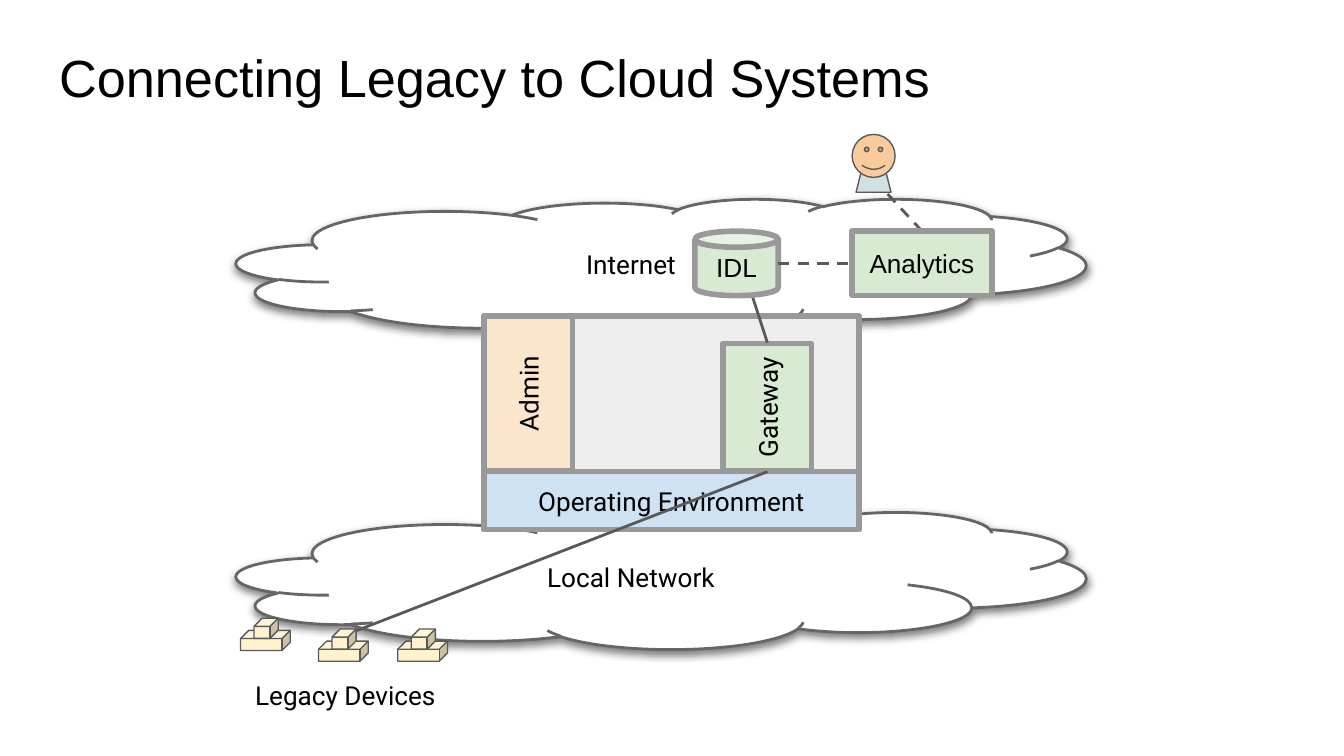
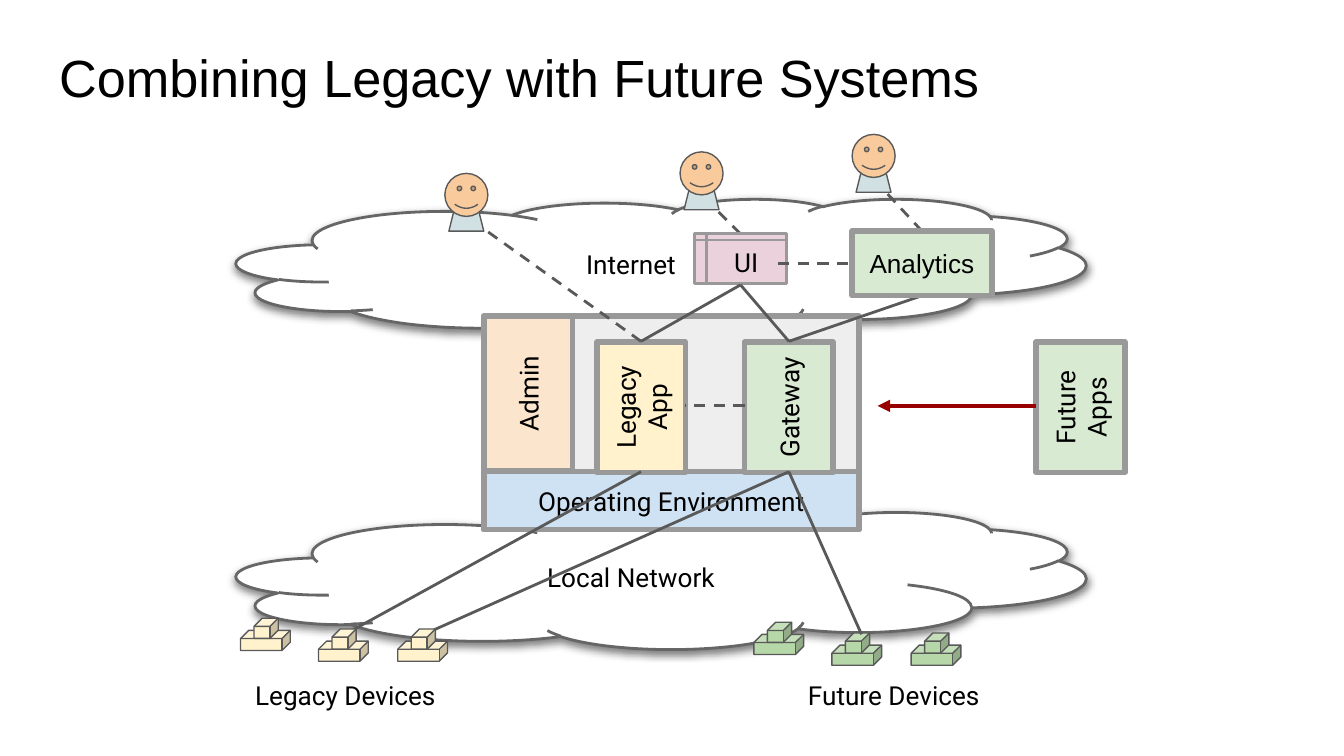
from lxml.etree import SubElement
from pptx import Presentation
from pptx.dml.color import RGBColor
from pptx.enum.dml import MSO_LINE
from pptx.enum.shapes import MSO_CONNECTOR, MSO_SHAPE as SHAPE
from pptx.enum.text import MSO_ANCHOR as ANCHOR, MSO_AUTO_SIZE, PP_ALIGN as ALIGN
from pptx.oxml.ns import qn
from pptx.util import Emu, Inches, Pt

PX = 9144  # 100 px to the inch
BLACK, WHITE = "000000", "FFFFFF"
EDGE, CLOUD_EDGE, INK, RED = "999999", "666666", "595959", "980000"
GREY, BLUE, ORANGE, GREEN = "EEEEEE", "CFE2F3", "FCE5CD", "D9EAD3"
YELLOW, LEAF, PINK = "FFF2CC", "B6D7A8", "EAD1DC"
SKIN, SHIRT = "F9CB9C", "D0E0E3"


def px(value):
    return Emu(round(value * PX))


def color(value):
    return RGBColor.from_string(value)


class Diagram:
    """Holds the deck, its style and the slide being drawn."""

    def __init__(self):
        self.deck = Presentation()
        self.deck.slide_width = Inches(10)
        self.deck.slide_height = Inches(5.625)
        self.page = None

    def start_page(self, title):
        self.page = self.deck.slides.add_slide(self.deck.slide_layouts[5])
        self.backdrop()
        box = self.page.shapes.title
        box.left, box.top, box.width, box.height = map(px, (34, 24, 932, 63))
        self.put_text(box, title, size=28, font="Arial", align=ALIGN.LEFT, anchor=ANCHOR.TOP)

    def put_text(self, box, text, size=14, font="Roboto", inset=10,
                 align=ALIGN.CENTER, anchor=ANCHOR.MIDDLE):
        frame = box.text_frame
        frame.text = text
        frame.word_wrap = True
        frame.auto_size = MSO_AUTO_SIZE.NONE
        frame.vertical_anchor = anchor
        frame.margin_left = frame.margin_right = px(inset)
        frame.margin_top = frame.margin_bottom = px(inset)
        para = frame.paragraphs[0]
        para.alignment = align
        for span in para.runs:
            span.font.size = Pt(size)
            span.font.name = font
            span.font.color.rgb = color(BLACK)

    def shape(self, kind, left, top, width, height, fill, line=EDGE, weight=3,
              adjust=None, parent=None):
        shapes = (parent or self.page).shapes
        box = shapes.add_shape(kind, *map(px, (left, top, width, height)))
        box.shadow.inherit = False
        box.fill.solid()
        box.fill.fore_color.rgb = color(fill)
        box.line.color.rgb = color(line)
        box.line.width = Pt(weight)
        if adjust is not None:
            box.adjustments[0] = adjust
        return box

    def block(self, text, left, top, width, height, fill, kind=SHAPE.RECTANGLE,
              weight=3, **style):
        box = self.shape(kind, left, top, width, height, fill, weight=weight)
        self.put_text(box, text, **style)
        return box

    def tall_block(self, text, center_x, center_y, length, fill):
        """Draw a block whose text reads upwards."""
        box = self.block(text, center_x - length / 2, center_y - 33, length, 66,
                         fill, inset=0)
        box.rotation = 270

    def label(self, text, left, top):
        box = self.page.shapes.add_textbox(*map(px, (left, top, 172, 31)))
        self.put_text(box, text)

    def link(self, start, end, dashed=False, ink=INK, weight=1.5, arrow=False):
        line = self.page.shapes.add_connector(
            MSO_CONNECTOR.STRAIGHT, *map(px, (*start, *end)))
        line.line.color.rgb = color(ink)
        line.line.width = Pt(weight)
        if dashed:
            line.line.dash_style = MSO_LINE.DASH
        properties = line._element.spPr
        if arrow:
            SubElement(properties.find(qn("a:ln")), qn("a:tailEnd"), type="triangle")
        SubElement(properties, qn("a:effectLst"))

    def cloud(self, text, top):
        box = self.shape(SHAPE.CLOUD, 176, top, 632, 102, WHITE, CLOUD_EDGE, 1.5)
        self.put_text(box, text)
        effects = box._element.spPr.find(qn("a:effectLst"))
        shadow = SubElement(effects, qn("a:outerShdw"), blurRad=str(Pt(4.5)),
                            dist=str(Pt(1.5)), dir="5400000", algn="bl", rotWithShape="0")
        tint = SubElement(shadow, qn("a:srgbClr"), val=BLACK)
        SubElement(tint, qn("a:alpha"), val="50000")

    def backdrop(self):
        self.cloud("Internet", 148)
        self.cloud("Local Network", 381)
        self.shape(SHAPE.RECTANGLE, 360, 235, 279, 159, GREY)
        self.block("Operating Environment", 360, 351, 279, 43, BLUE)
        self.tall_block("Admin", 393, 293, 115, ORANGE)

    def person(self, left, top):
        group = self.page.shapes.add_group_shape()
        self.shape(SHAPE.TRAPEZOID, left + 3, top + 24, 26, 19, SHIRT, INK, 0.75, 0.25, group)
        self.shape(SHAPE.SMILEY_FACE, left, top, 32, 32, SKIN, INK, 0.75, 0.047, group)

    def devices(self, text, text_left, left, top, fill):
        """Draw three stacked-cube devices above their label."""
        for across, down in ((0, 0), (58, 8), (117, 8)):
            group = self.page.shapes.add_group_shape()
            for dx, dy, width in ((0, 9, 37), (10, 0, 18)):
                self.shape(SHAPE.CUBE, left + across + dx, top + down + dy, width, 15,
                           fill, INK, 0.75, 0.407, group)
        self.label(text, text_left, 502)

    def analytics(self):
        self.link((686, 172), (649, 132), dashed=True)
        self.person(634, 100)
        self.block("Analytics", 634, 172, 104, 48, GREEN, font="Arial")
        self.link((579, 196), (634, 196), dashed=True)

    def legacy_devices(self):
        self.devices("Legacy Devices", 171, 179, 460, YELLOW)


def connecting_page(diagram):
    diagram.start_page("Connecting Legacy to Cloud Systems")
    diagram.tall_block("Gateway", 571, 303, 95, GREEN)
    diagram.link((571, 255), (548, 184))
    diagram.block("IDL", 517, 172, 62, 48, GREEN, SHAPE.CAN, font="Arial")
    diagram.link((571, 351), (253, 474))
    diagram.legacy_devices()
    diagram.analytics()


def combining_page(diagram):
    diagram.start_page("Combining Legacy with Future Systems")
    gateway_top, gateway_foot = (587, 254), (587, 351)
    legacy_top, legacy_foot = (477, 254), (477, 351)
    ui_foot = (551, 212)

    for text, center_x, fill in (("Gateway", 587, GREEN), ("Legacy App", 477, YELLOW),
                                 ("Future Apps", 804, GREEN)):
        diagram.tall_block(text, center_x, 303, 97, fill)
    diagram.link((771, 302), (653, 302), ink=RED, weight=2.25, arrow=True)
    diagram.link((554, 302), (510, 302), dashed=True)

    diagram.link((551, 174), (522, 145), dashed=True)
    diagram.link(legacy_top, (347, 161), dashed=True)
    diagram.person(331, 129)
    diagram.person(506, 113)
    diagram.block("UI", 517, 174, 68, 37, PINK, SHAPE.FLOWCHART_INTERNAL_STORAGE,
                  weight=1.5, inset=0)
    diagram.link(gateway_top, ui_foot)
    diagram.link(legacy_top, ui_foot)
    diagram.link(gateway_top, (686, 220))

    diagram.link(legacy_foot, (253, 474))
    diagram.link(gateway_foot, (311, 474))
    diagram.legacy_devices()
    diagram.devices("Future Devices", 579, 561, 463, LEAF)
    diagram.link(gateway_foot, (641, 472))
    diagram.analytics()


def main():
    diagram = Diagram()
    connecting_page(diagram)
    combining_page(diagram)
    diagram.deck.save("out.pptx")


if __name__ == "__main__":
    main()
